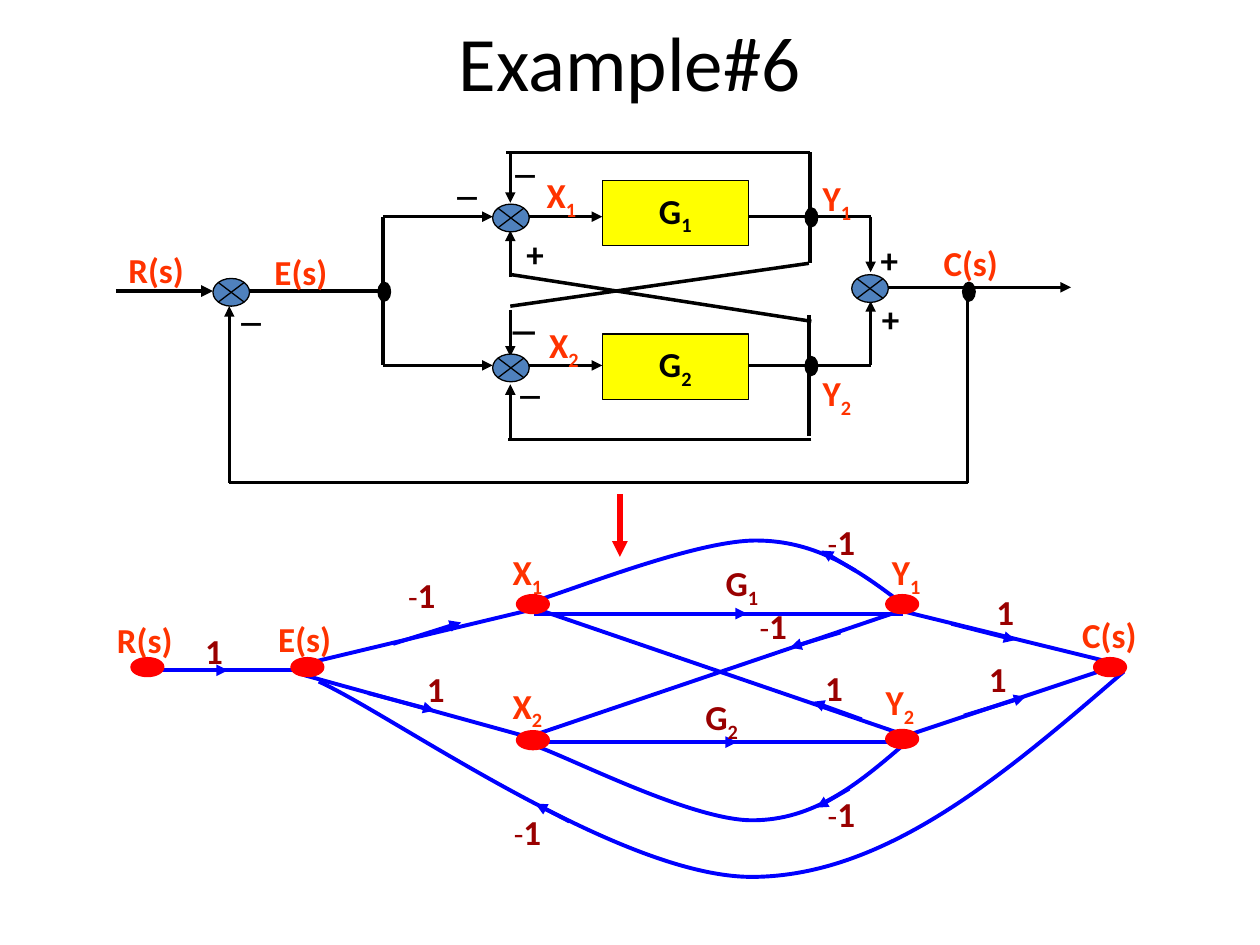
from dataclasses import dataclass
from typing import Sequence

from lxml.etree import SubElement
from pptx import Presentation
from pptx.dml.color import RGBColor
from pptx.enum.shapes import MSO_CONNECTOR as Connector, MSO_SHAPE as Shape
from pptx.enum.text import MSO_ANCHOR as Anchor, PP_ALIGN as Align
from pptx.oxml.ns import qn
from pptx.util import Emu, Pt

PX = 9144  # 100 px to the inch
FONT = "Calibri"
BLACK = RGBColor(0x00, 0x00, 0x00)
STEEL = RGBColor(0x4F, 0x81, 0xBD)
YELLOW = RGBColor(0xFF, 0xFF, 0x00)
ORANGE = RGBColor(0xFF, 0x33, 0x00)
MAROON = RGBColor(0x99, 0x00, 0x00)
BLUE = RGBColor(0x00, 0x00, 0xFF)
RED = RGBColor(0xFF, 0x00, 0x00)

# Label widths by text; signals with a subscript share the default
LABEL_WIDTHS = {"+": 36, "－": 43, "1": 34, "-1": 72, "R(s)": 69, "E(s)": 69, "C(s)": 69}
SUBSCRIPTED_WIDTH = 52
LABEL_HEIGHTS = {16: 37, 18: 40, 20: 43}

Point = tuple[int, int]


@dataclass
class Wire:
    start: Point
    end: Point
    arrow: bool = False
    color: RGBColor = BLACK
    width: float = 2


@dataclass
class Label:
    text: str  # "_" starts a subscript
    x: int
    y: int
    color: RGBColor = ORANGE
    size: int = 20


@dataclass
class Branch:
    route: Sequence[Point]  # two ends, or the points of a cubic Bézier chain
    arrow: tuple[Point, Point]
    gain: str
    gain_at: Point


@dataclass
class Node:
    name: str
    left: int
    top: int
    name_at: Point


def px(*lengths: int) -> list[Emu]:
    return [Emu(length * PX) for length in lengths]


def write(frame, text: str, color: RGBColor, size: int) -> None:
    paragraph = frame.paragraphs[0]
    minus = text.startswith("-")
    parts = ["-", text[1:]] if minus else text.split("_")
    for index, part in enumerate(parts):
        run = paragraph.add_run()
        run.text = part
        font = run.font
        font.name, font.color.rgb = FONT, color
        light = minus and index == 0
        font.size, font.bold = Pt(18 if light else size), not light
        if index and not minus:
            font._element.set("baseline", "-25000")


def draw_label(slide, label: Label) -> None:
    width = LABEL_WIDTHS.get(label.text, SUBSCRIPTED_WIDTH)
    box = px(label.x, label.y, width, LABEL_HEIGHTS[label.size])
    frame = slide.shapes.add_textbox(*box).text_frame
    frame.word_wrap = True
    frame.margin_right = 0
    write(frame, label.text, label.color, label.size)


def draw_wire(slide, wire: Wire) -> None:
    line = slide.shapes.add_connector(Connector.STRAIGHT, *px(*wire.start, *wire.end))
    line.line.color.rgb = wire.color
    line.line.width = Pt(wire.width)
    properties = line._element.spPr
    if wire.arrow:
        SubElement(properties.find(qn("a:ln")), qn("a:tailEnd"), type="triangle")
    SubElement(properties, qn("a:effectLst"))


def draw_shape(slide, kind: Shape, left: int, top: int, width: int, height: int,
               fill: RGBColor, outline: RGBColor = BLACK, weight: float = 0.75):
    shape = slide.shapes.add_shape(kind, *px(left, top, width, height))
    shape.shadow.inherit = False
    shape.fill.solid()
    shape.fill.fore_color.rgb = fill
    shape.line.color.rgb = outline
    shape.line.width = Pt(weight)
    return shape


def draw_curve(slide, route: Sequence[Point]) -> None:
    builder = slide.shapes.build_freeform(*route[0], scale=PX)
    builder.add_line_segments(route[1:], close=False)
    curve = builder.convert_to_shape()
    # Join every three straight segments into one Bézier segment
    segments = list(curve._element.iter(qn("a:lnTo")))
    outline = segments[0].getparent()
    for first in range(0, len(segments), 3):
        bezier = SubElement(outline, qn("a:cubicBezTo"))
        for segment in segments[first:first + 3]:
            bezier.append(segment[0])
            outline.remove(segment)
    curve.shadow.inherit = False
    curve.fill.background()
    curve.line.color.rgb = BLUE
    curve.line.width = Pt(2.25)


def draw_branch(slide, branch: Branch) -> None:
    if len(branch.route) == 2:
        draw_wire(slide, Wire(*branch.route, color=BLUE, width=2.25))
    else:
        draw_curve(slide, branch.route)
    draw_wire(slide, Wire(*branch.arrow, True, BLUE, 2.25))
    draw_label(slide, Label(branch.gain, *branch.gain_at, MAROON))


def draw_node(slide, node: Node) -> None:
    draw_shape(slide, Shape.OVAL, node.left, node.top, 24, 13, RED, RED, 2.25)
    draw_label(slide, Label(node.name, *node.name_at))


# Block diagram
WIRES = [
    Wire((92, 231), (169, 231), True, width=2.25),
    Wire((198, 231), (304, 231)),
    Wire((304, 172), (304, 290)),
    Wire((304, 172), (391, 172), True, width=1.75),
    Wire((304, 290), (391, 290), True),
    *(Wire((420, y), (478, y), True) for y in (172, 290)),
    *(Wire((594, y), (691, y)) for y in (172, 290)),
    Wire((691, 172), (691, 216), True),
    Wire((691, 290), (691, 239), True),
    Wire((705, 228), (850, 228), True),
    # Inner loops
    Wire((642, 250), (642, 346)),
    Wire((644, 349), (403, 349)),
    Wire((405, 349), (405, 305), True),
    Wire((643, 209), (643, 121)),
    Wire((643, 121), (402, 121)),
    Wire((405, 121), (405, 161), True),
    # Crossed coupling
    Wire((405, 220), (405, 183), True),
    Wire((405, 246), (405, 283), True),
    Wire((406, 218), (644, 255)),
    Wire((642, 209), (405, 243)),
    # Outer feedback
    Wire((768, 228), (768, 383)),
    Wire((768, 383), (182, 383)),
    Wire((182, 383), (182, 243), True),
]
JUNCTIONS = [(169, 221), (391, 162), (391, 281), (676, 218)]
TAKEOFFS = [(639, 165), (764, 224), (300, 224), (639, 283)]
BLOCKS = [("G_1", 143), ("G_2", 265)]
LABELS = [
    *(Label("+", x, y, BLACK) for x, y in [(690, 231), (408, 180), (689, 184)]),
    Label("－", 394, 244, BLACK, 18),
    *(Label("－", x, y, BLACK, 16)
      for x, y in [(400, 297), (396, 122), (179, 239), (350, 139)]),
    Label("C(s)", 739, 187), Label("R(s)", 92, 192), Label("E(s)", 208, 194),
    Label("Y_2", 643, 290), Label("Y_1", 643, 135),
    Label("X_1", 424, 133), Label("X_2", 426, 252),
]

# Signal flow graph
BRANCHES = [
    Branch([(118, 532), (245, 532)], ((156, 532), (181, 532)), "1", (153, 495)),
    Branch([(250, 525), (417, 485)], ((312, 511), (366, 494)), "-1", (314, 450)),
    Branch([(242, 536), (423, 586)], ((292, 550), (345, 564)), "1", (329, 525)),
    Branch([(716, 479), (683, 454), (649, 429), (600, 429),
            (550, 429), (448, 471), (418, 479)],
           ((679, 453), (652, 437)), "-1", (647, 408)),
    Branch([(717, 484), (425, 583)], ((667, 502), (627, 514)), "-1", (593, 475)),
    Branch([(892, 533), (798, 614), (704, 695), (598, 696),
            (492, 697), (311, 567), (253, 541)],
           ((452, 652), (425, 638)), "-1", (398, 638)),
    Branch([(716, 592), (681, 622), (646, 651), (597, 651),
            (549, 651), (454, 602), (425, 592)],
           ((674, 626), (648, 641)), "-1", (647, 624)),
    Branch([(716, 485), (883, 526)], ((755, 495), (806, 508)), "1", (781, 464)),
    Branch([(716, 585), (875, 532)], ((765, 568), (814, 553)), "1", (775, 517)),
    Branch([(424, 487), (717, 487)], ((540, 487), (593, 487)), "G_1", (566, 441)),
    Branch([(425, 589), (718, 589)], ((523, 589), (585, 589)), "G_2", (550, 547)),
    Branch([(717, 583), (425, 483)], ((684, 571), (645, 557)), "1", (645, 524)),
]
NODES = [
    Node("R(s)", 105, 523, (83, 486)), Node("E(s)", 232, 523, (211, 485)),
    Node("C(s)", 869, 523, (849, 482)),
    Node("X_1", 411, 473, (397, 432)), Node("X_2", 411, 581, (397, 538)),
    Node("Y_2", 704, 580, (693, 535)), Node("Y_1", 704, 473, (698, 432)),
]


def main() -> None:
    deck = Presentation()
    deck.slide_width, deck.slide_height = px(1000, 750)
    slide = deck.slides.add_slide(deck.slide_layouts[5])

    # Title
    title = slide.shapes.title
    title.left, title.top, title.width, title.height = px(50, 5, 900, 87)
    title.text_frame.text = "Example#6"
    title.text_frame.vertical_anchor = Anchor.MIDDLE
    heading = title.text_frame.paragraphs[0]
    heading.alignment = Align.CENTER
    font = heading.runs[0].font
    font.name, font.size, font.color.rgb = FONT, Pt(44), BLACK

    # Block diagram
    for wire in WIRES:
        draw_wire(slide, wire)
    for left, top in JUNCTIONS:
        draw_shape(slide, Shape.FLOWCHART_SUMMING_JUNCTION, left, top, 29, 22, STEEL)
    for name, top in BLOCKS:
        block = draw_shape(slide, Shape.RECTANGLE, 478, top, 116, 52, YELLOW)
        block.text_frame.word_wrap = False
        block.text_frame.vertical_anchor = Anchor.MIDDLE
        block.text_frame.paragraphs[0].alignment = Align.CENTER
        write(block.text_frame, name, BLACK, 20)
    for left, top in TAKEOFFS:
        draw_shape(slide, Shape.OVAL, left, top, 10, 15, BLACK)
    for label in LABELS:
        draw_label(slide, label)

    # Signal flow graph, reached by the red arrow
    for branch in BRANCHES:
        draw_branch(slide, branch)
    for node in NODES:
        draw_node(slide, node)
    draw_wire(slide, Wire((492, 392), (492, 442), True, RED, 3))

    deck.save("out.pptx")


if __name__ == "__main__":
    main()
